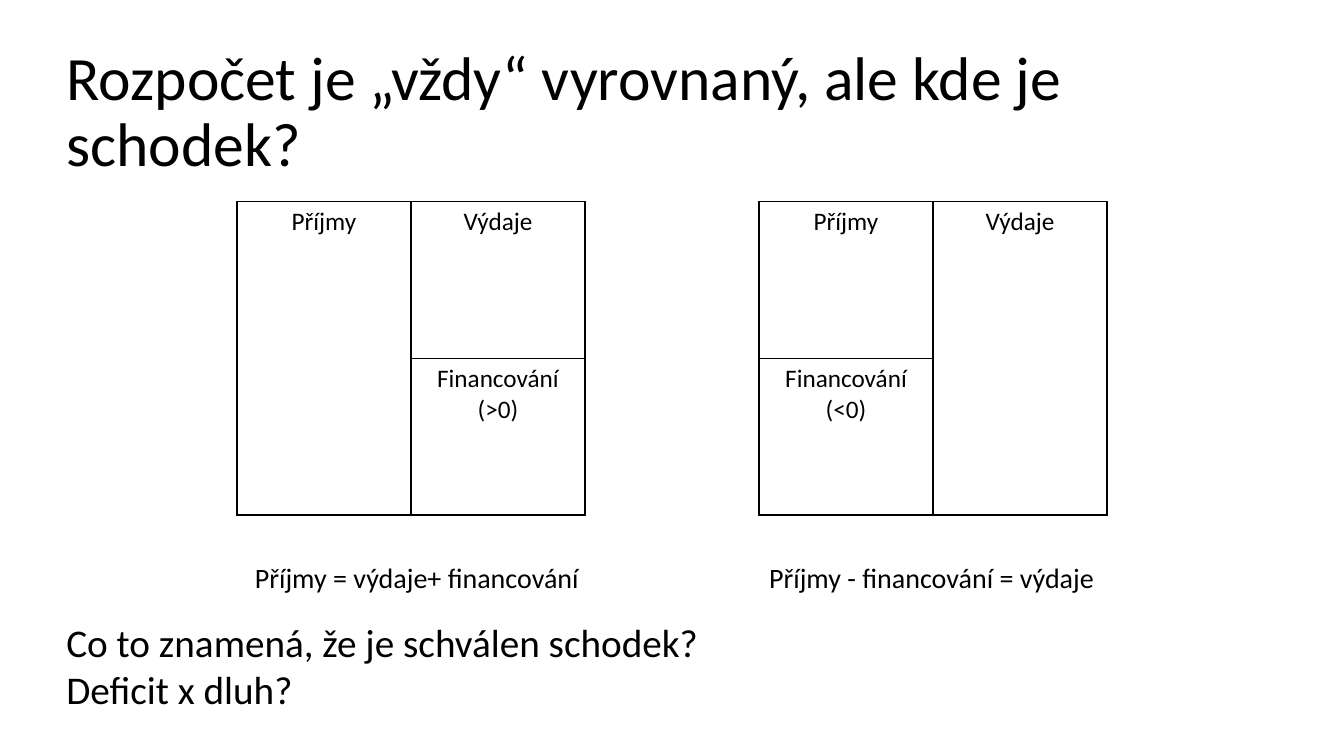
from dataclasses import dataclass

from lxml.etree import SubElement
from pptx import Presentation
from pptx.dml.color import RGBColor
from pptx.enum.text import MSO_ANCHOR as Anchor, MSO_AUTO_SIZE as AutoSize, PP_ALIGN as Align
from pptx.oxml.ns import qn
from pptx.util import Inches, Pt

BLACK = RGBColor(0, 0, 0)
FONT = "Calibri"
GAP_COL = 2  # empty column between the two budgets


@dataclass
class Label:
    lines: list[str]
    left: float
    top: float
    width: float
    height: float
    size: int


@dataclass
class BudgetCell:
    row: int
    col: int
    lines: list[str]
    tall: bool = False


LABELS = [
    Label(["Příjmy = výdaje+ financování"], 2.43, 5.51, 3.47, 0.4, 20),
    Label(["Příjmy - financování = výdaje"], 7.53, 5.51, 3.72, 0.4, 20),
    Label(["Co to znamená, že je schválen schodek?", "Deficit x dluh?"],
          0.56, 6.08, 7.15, 0.71, 28),
]
CELLS = [
    BudgetCell(0, 0, ["Příjmy"], tall=True),
    BudgetCell(0, 1, ["Výdaje"]),
    BudgetCell(1, 1, ["Financování", "(>0)"]),
    BudgetCell(0, 3, ["Příjmy"]),
    BudgetCell(1, 3, ["Financování", "(<0)"]),
    BudgetCell(0, 4, ["Výdaje"], tall=True),
]


def write(tf, lines: list[str], size: int, align=Align.LEFT) -> None:
    tf.text = "\n".join(lines)
    for p in tf.paragraphs:
        p.alignment = align
        for name, value in {"name": FONT, "size": Pt(size), "bold": False}.items():
            setattr(p.font, name, value)
        p.font.color.rgb = BLACK


def set_borders(cell, visible: str) -> None:
    """Draw the named sides (L, R, T, B) and clear the others."""
    tc_pr = cell._tc.get_or_add_tcPr()
    for i, side in enumerate("LRTB"):
        ln = SubElement(tc_pr, qn(f"a:ln{side}"), w=str(Pt(1)))
        if side in visible:
            fill = SubElement(ln, qn("a:solidFill"))
            SubElement(fill, qn("a:srgbClr"), val=str(BLACK))
        else:
            SubElement(ln, qn("a:noFill"))
        tc_pr.insert(i, ln)


def add_budgets(s) -> None:
    frame = s.shapes.add_table(2, 5, Inches(2.35), Inches(2), Inches(8.63), Inches(3.11))
    table = frame.table
    table.first_row = table.horz_banding = False
    for col in table.columns:
        col.width = Inches(1.726)
    for row in table.rows:
        row.height = Inches(1.555)
    for r in range(2):
        for c in range(5):
            cell = table.cell(r, c)
            cell.fill.background()
            set_borders(cell, "LR" if c == GAP_COL else "LRTB")
    for item in CELLS:
        cell = table.cell(item.row, item.col)
        if item.tall:
            cell.merge(table.cell(1, item.col))
        cell.margin_left = cell.margin_right = Inches(0.08)
        write(cell.text_frame, item.lines, 18, Align.CENTER)


def add_label(s, label: Label) -> None:
    box = s.shapes.add_textbox(*map(Inches, (label.left, label.top, label.width, label.height)))
    box.text_frame.word_wrap = True
    write(box.text_frame, label.lines, label.size)


def main() -> None:
    prs = Presentation()
    prs.slide_width, prs.slide_height = Inches(13.33), Inches(7.5)
    s = prs.slides.add_slide(prs.slide_layouts[5])

    # Title
    title = s.shapes.title
    box = {"left": 0.56, "top": 0.4, "width": 12.41, "height": 1.45}
    for name, value in box.items():
        setattr(title, name, Inches(value))
    tf = title.text_frame
    write(tf, ["Rozpočet je „vždy“ vyrovnaný, ale kde je schodek?"], 44)
    for name, value in {"word_wrap": True, "auto_size": AutoSize.NONE,
                        "vertical_anchor": Anchor.MIDDLE}.items():
        setattr(tf, name, value)
    tf.paragraphs[0].line_spacing = 0.9

    # Two budgets side by side
    add_budgets(s)

    # Equations and questions
    for label in LABELS:
        add_label(s, label)

    prs.save("out.pptx")


if __name__ == "__main__":
    main()
